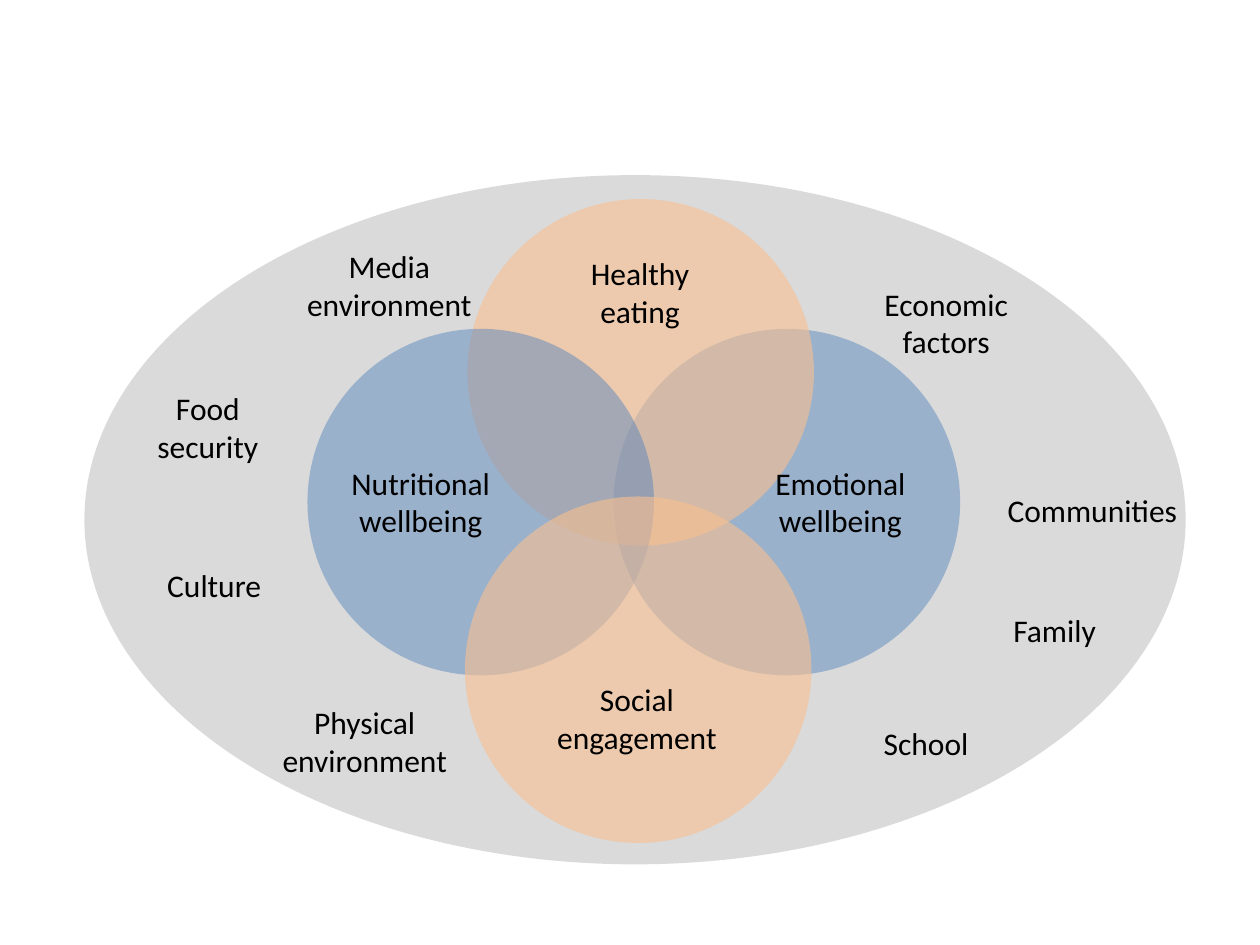
import pptx
import pptx.dml.color
import pptx.enum.shapes
import pptx.enum.text
import pptx.util
from pptx.oxml.ns import qn
from lxml import etree

COLS, ROWS = 100, 75
WIDTH, HEIGHT = pptx.util.Inches(10), pptx.util.Inches(7.5)
SETTING = (6.7, 13.9, 87.4, 54.7)
DIAMETER = 27.5
BLUE, ORANGE, GREY = ("4F81BD", 46), ("FAC090", 60), ("808080", 29)

DOMAINS = [
    ("Emotional wellbeing", 42, 12.2, BLUE, (11.2, 10.2, 13.6)),
    ("Healthy eating", 30.4, 1.9, ORANGE, (6.9, 3.9, 13.6)),
    ("Nutritional wellbeing", 17.7, 12.2, BLUE, (2.2, 10.2, 13.6)),
    ("Social engagement", 30.2, 25.5, ORANGE, (6.2, 14.1, 14.9)),
]
FACTORS = [
    ("Food security", 3, 16.5, 13.6, 7.1),
    ("Family", 70.2, 34.1, 13.6, 4),
    ("Culture", 3.5, 30.5, 13.6, 4),
    ("Physical environment", 14.1, 41.4, 16.3, 7.1),
    ("Media environment", 15.6, 5.2, 17.2, 7.1),
    ("Economic factors", 61.6, 8.2, 13.6, 7.1),
    ("Communities", 72.2, 24.6, 15.6, 4),
    ("School", 60, 43.1, 13.6, 4),
]


def rgb(value):
    """Return a colour from its hex string."""
    return pptx.dml.color.RGBColor.from_string(value)


def place(x, y, w, h):
    """Convert a box in columns and rows to slide lengths."""
    col, row = WIDTH / COLS, HEIGHT / ROWS
    return round(x * col), round(y * row), round(w * col), round(h * row)


def add_ellipse(s, box, color, opacity):
    """Add a borderless ellipse with a translucent fill."""
    sp = s.shapes.add_shape(pptx.enum.shapes.MSO_SHAPE.OVAL, *place(*box))
    sp.shadow.inherit = False
    sp.line.fill.background()
    sp.fill.solid()
    sp.fill.fore_color.rgb = rgb(color)
    clr = next(sp.element.spPr.iter(qn("a:srgbClr")))
    etree.SubElement(clr, qn("a:alpha"), val=str(opacity * 1000))


def add_text(s, text, box, size=18, font="Calibri", color="000000"):
    """Add a centred, wrapping label."""
    tf = s.shapes.add_textbox(*place(*box)).text_frame
    tf.word_wrap = True
    tf.auto_size = pptx.enum.text.MSO_AUTO_SIZE.SHAPE_TO_FIT_TEXT
    p = tf.paragraphs[0]
    p.alignment = pptx.enum.text.PP_ALIGN.CENTER
    r = p.add_run()
    r.text = text
    r.font.size = pptx.util.Pt(size)
    r.font.name = font
    r.font.color.rgb = rgb(color)


def add_domains(s, box):
    """Draw the overlapping circles and then their labels."""
    left, top = box[:2]
    for _, x, y, fill, _ in DOMAINS:
        add_ellipse(s, (left + x, top + y, DIAMETER, DIAMETER), *fill)
    for text, x, y, _, (dx, dy, w) in DOMAINS:
        add_text(s, text, (left + x + dx, top + y + dy, w, 7.1))


def add_factors(s, box):
    """Label the surrounding influences."""
    left, top = box[:2]
    for text, x, y, w, h in FACTORS:
        add_text(s, text, (left + x, top + y, w, h))


def main():
    """Build and save the slide."""
    prs = pptx.Presentation()
    prs.slide_width, prs.slide_height = WIDTH, HEIGHT
    s = prs.slides.add_slide(prs.slide_layouts[6])
    add_ellipse(s, SETTING, *GREY)
    add_domains(s, SETTING)
    add_factors(s, SETTING)
    prs.save("out.pptx")


if __name__ == "__main__":
    main()
